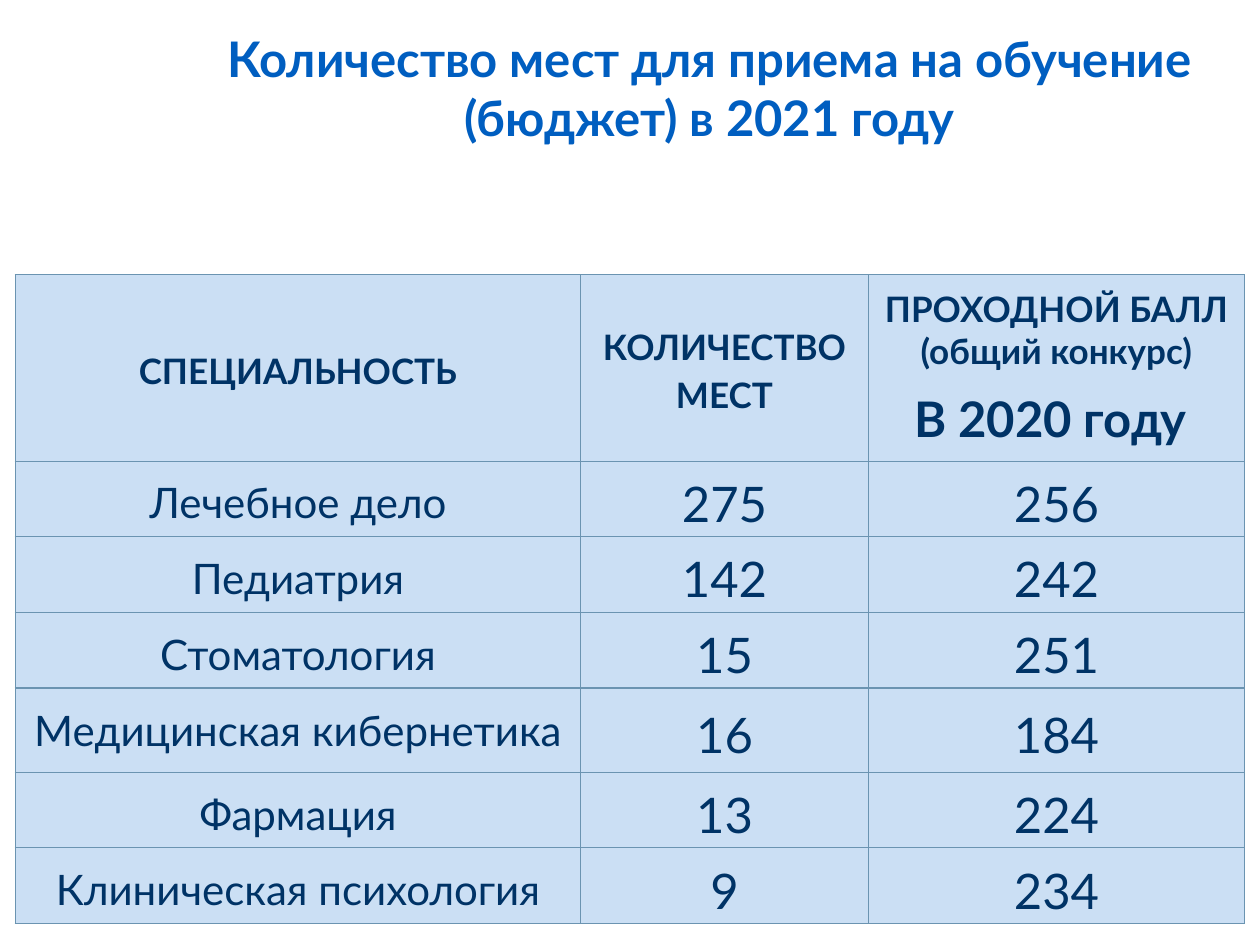
from lxml import etree
from pptx import Presentation
from pptx.dml.color import RGBColor
from pptx.enum.text import MSO_ANCHOR, PP_ALIGN
from pptx.oxml.ns import qn
from pptx.util import Inches, Pt

MIDDLE = MSO_ANCHOR.MIDDLE
CENTER = PP_ALIGN.CENTER

HEADING = "Количество мест для приема на обучение (бюджет) в 2021 году"
HEADERS = [
    ["СПЕЦИАЛЬНОСТЬ"],
    ["КОЛИЧЕСТВО МЕСТ"],
    ["ПРОХОДНОЙ БАЛЛ (общий конкурс)", "В 2020 году "],
]
SPECIALTIES = [
    ("Лечебное дело", 275, 256),
    ("Педиатрия", 142, 242),
    ("Стоматология", 15, 251),
    ("Медицинская кибернетика", 16, 184),
    ("Фармация", 13, 224),
    ("Клиническая психология", 9, 234),
]
SINGLE_SPACED = {(0, 2), (4, 0)}

THEME = {
    "font": "Lato",
    "heading": RGBColor.from_string("005EC0"),
    "text": RGBColor.from_string("003366"),
    "cell": RGBColor.from_string("CBDFF4"),
    "border": "6B94B1",
    "large": 28,
    "name": 24,
    "header": 20,
}
COLUMN_WIDTHS = [4.49, 2.28, 2.99]
ROW_HEIGHTS = [1.48, 0.6, 0.6, 0.6, 0.67, 0.6, 0.6]


def style_paragraph(paragraph, size, color, bold):
    paragraph.alignment = CENTER
    for run in paragraph.runs:
        run.font.name = THEME["font"]
        run.font.size = Pt(size)
        run.font.bold = bold
        run.font.color.rgb = color


def add_borders(cell):
    properties = cell._tc.get_or_add_tcPr()
    for index, side in enumerate(("lnL", "lnR", "lnT", "lnB")):
        line = etree.Element(qn(f"a:{side}"), w=str(Pt(0.75)))
        fill = etree.SubElement(line, qn("a:solidFill"))
        etree.SubElement(fill, qn("a:srgbClr"), val=THEME["border"])
        properties.insert(index, line)


def fill_cell(cell, lines, sizes, bold, spacing):
    cell.fill.solid()
    cell.fill.fore_color.rgb = THEME["cell"]
    cell.vertical_anchor = MIDDLE
    cell.margin_left = cell.margin_right = Inches(0.07)
    cell.margin_top = cell.margin_bottom = 0
    cell.text_frame.text = "\n".join(lines)
    for paragraph, size in zip(cell.text_frame.paragraphs, sizes):
        style_paragraph(paragraph, size, THEME["text"], bold)
        paragraph.line_spacing = spacing
        paragraph.space_after = Pt(10)
    add_borders(cell)


def add_heading(slide):
    box = slide.shapes.add_textbox(Inches(1.38), 0, Inches(8.5), Inches(1.39))
    frame = box.text_frame
    frame.word_wrap = True
    frame.vertical_anchor = MIDDLE
    frame.text = HEADING
    style_paragraph(frame.paragraphs[0], THEME["large"], THEME["heading"], True)


def add_admissions(slide):
    rows = [HEADERS] + [[[str(value)] for value in row] for row in SPECIALTIES]
    table = slide.shapes.add_table(
        len(rows), len(HEADERS), Inches(0.12), Inches(2.18),
        Inches(sum(COLUMN_WIDTHS)), Inches(sum(ROW_HEIGHTS)),
    ).table
    for column, width in zip(table.columns, COLUMN_WIDTHS):
        column.width = Inches(width)
    for row, height in zip(table.rows, ROW_HEIGHTS):
        row.height = Inches(height)
    for r, row in enumerate(rows):
        for c, lines in enumerate(row):
            if r == 0:
                sizes = [THEME["header"], THEME["large"]]
            else:
                sizes = [THEME["name"] if c == 0 else THEME["large"]]
            spacing = 1.0 if (r, c) in SINGLE_SPACED else 1.15
            fill_cell(table.cell(r, c), lines, sizes, r == 0, spacing)


def main():
    presentation = Presentation()
    presentation.slide_width = Inches(10)
    presentation.slide_height = Inches(7.5)
    slide = presentation.slides.add_slide(presentation.slide_layouts[6])
    add_admissions(slide)
    add_heading(slide)
    presentation.save("out.pptx")


if __name__ == "__main__":
    main()
